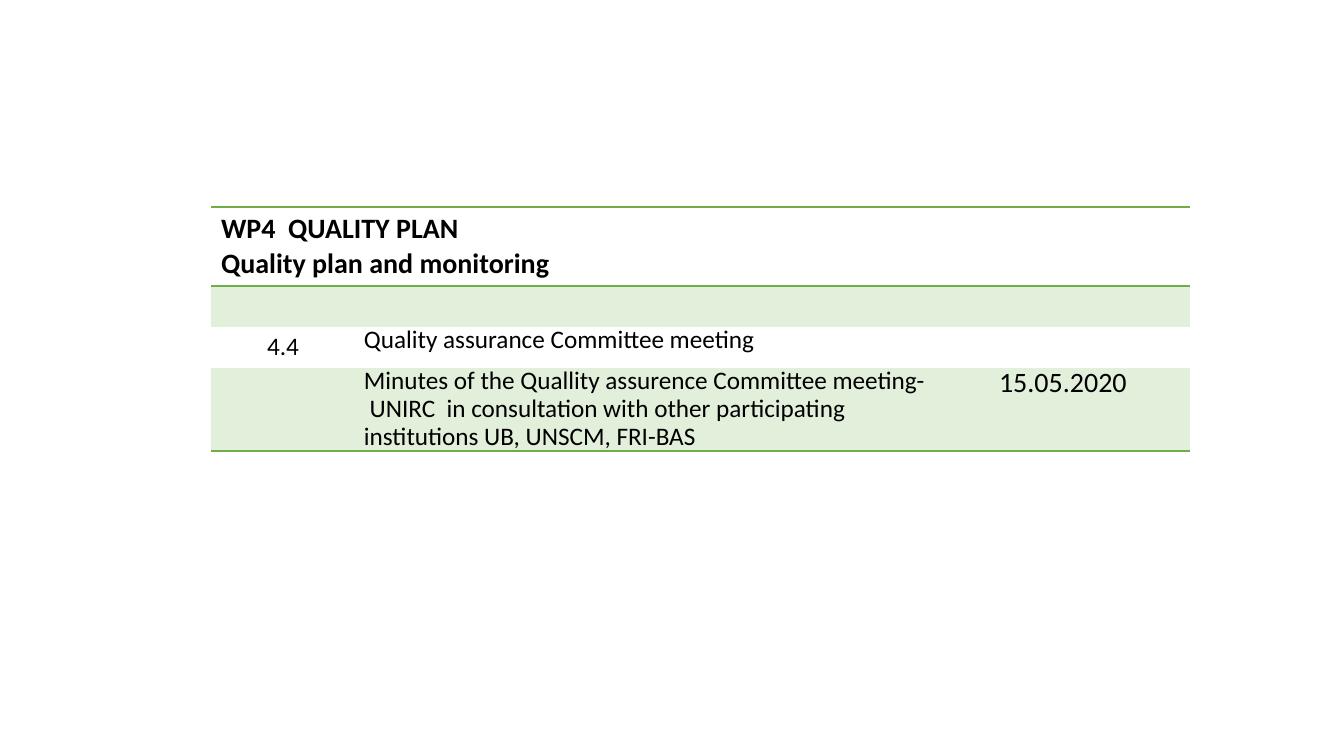
from dataclasses import dataclass

from lxml import etree
from pptx import Presentation
from pptx.dml.color import RGBColor
from pptx.enum import text
from pptx.oxml import ns
from pptx.util import Pt

SCALE = 12192000 / 1344
NO_STYLE = "{2D5ABB26-0587-4C30-8999-92F81FD0307C}"
FIXED_SPACE = chr(160)


@dataclass(frozen=True)
class Theme:
    """Colours and type sizes of the slide."""

    font: str = "Calibri"
    ink: str = "000000"
    rule: str = "70AD47"
    band: str = "E2EFDA"
    large: int = 20
    body: int = 18
    rule_width: int = 1


THEME = Theme()


def px(length):
    """Turn pixels into EMU."""
    return round(length * SCALE)


def add_rules(cell, sides):
    """Draw green rules on the given sides of a cell."""
    properties = cell._tc.get_or_add_tcPr()
    for index, side in enumerate(sides):
        line = etree.Element(ns.qn(f"a:ln{side}"), w=str(Pt(THEME.rule_width)))
        fill = etree.SubElement(line, ns.qn("a:solidFill"))
        etree.SubElement(fill, ns.qn("a:srgbClr"), val=THEME.rule)
        properties.insert(index, line)


def fill_row(row, banded, sides=""):
    """Set the fill, rules and type of every cell in a row."""
    for cell in row.cells:
        if banded:
            cell.fill.solid()
            cell.fill.fore_color.rgb = RGBColor.from_string(THEME.band)
        else:
            cell.fill.background()
        add_rules(cell, sides)
        cell.text_frame.paragraphs[0].font.size = Pt(THEME.body)


def write_cell(cell, content, size=THEME.body, bold=False, align=text.PP_ALIGN.LEFT):
    """Write one paragraph into a cell."""
    cell.text = content
    paragraph = cell.text_frame.paragraphs[0]
    paragraph.alignment = align
    paragraph.font.name = THEME.font
    paragraph.font.size = Pt(size)
    paragraph.font.bold = bold
    paragraph.font.color.rgb = RGBColor.from_string(THEME.ink)
    return paragraph


def write_entry(cell, content, indent=6, **style):
    """Write a tightly set work plan entry into a cell."""
    cell.margin_left = cell.margin_right = px(3)
    cell.margin_top = cell.margin_bottom = 0
    paragraph = write_cell(cell, content, **style)
    paragraph.line_spacing = 0.9
    paragraph._p.get_or_add_pPr().set("marL", str(px(indent)))


def add_work_plan(slide, left, top, columns, rows):
    """Place the quality plan table with its corner at left and top."""
    frame = slide.shapes.add_table(
        len(rows), len(columns), px(left), px(top), px(sum(columns)), px(sum(rows))
    )
    table = frame.table
    table.first_row = table.horz_banding = False
    frame._element.xpath(".//a:tableStyleId")[0].text = NO_STYLE
    for column, width in zip(table.columns, columns):
        column.width = px(width)
    for row, height in zip(table.rows, rows):
        row.height = px(height)

    heading, spacer, meeting, minutes = table.rows
    fill_row(heading, False, "TB")
    fill_row(spacer, True)
    fill_row(meeting, False)
    fill_row(minutes, True, "B")

    title = table.cell(0, 0)
    title.merge(table.cell(0, len(columns) - 1))
    write_cell(title, "WP4  QUALITY PLAN\vQuality plan and monitoring", THEME.large, True)

    center = text.PP_ALIGN.CENTER
    number = meeting.cells[0]
    number.vertical_anchor = text.MSO_ANCHOR.MIDDLE
    write_entry(number, "4.4", indent=0, align=center)
    write_entry(meeting.cells[1], "Quality assurance Committee meeting")
    write_entry(
        minutes.cells[1],
        f"Minutes of the Quallity assurence Committee meeting- {FIXED_SPACE}UNIRC  in "
        "consultation with other participating institutions UB, UNSCM, FRI-BAS",
    )
    write_entry(minutes.cells[2], "15.05.2020", size=THEME.large, align=center)


def main():
    """Build and save the slide."""
    presentation = Presentation()
    presentation.slide_width = px(1344)
    presentation.slide_height = px(756)
    slide = presentation.slides.add_slide(presentation.slide_layouts[6])
    add_work_plan(slide, 211, 207, columns=(144, 575, 260), rows=(79, 40, 41, 83))
    presentation.save("out.pptx")


if __name__ == "__main__":
    main()
